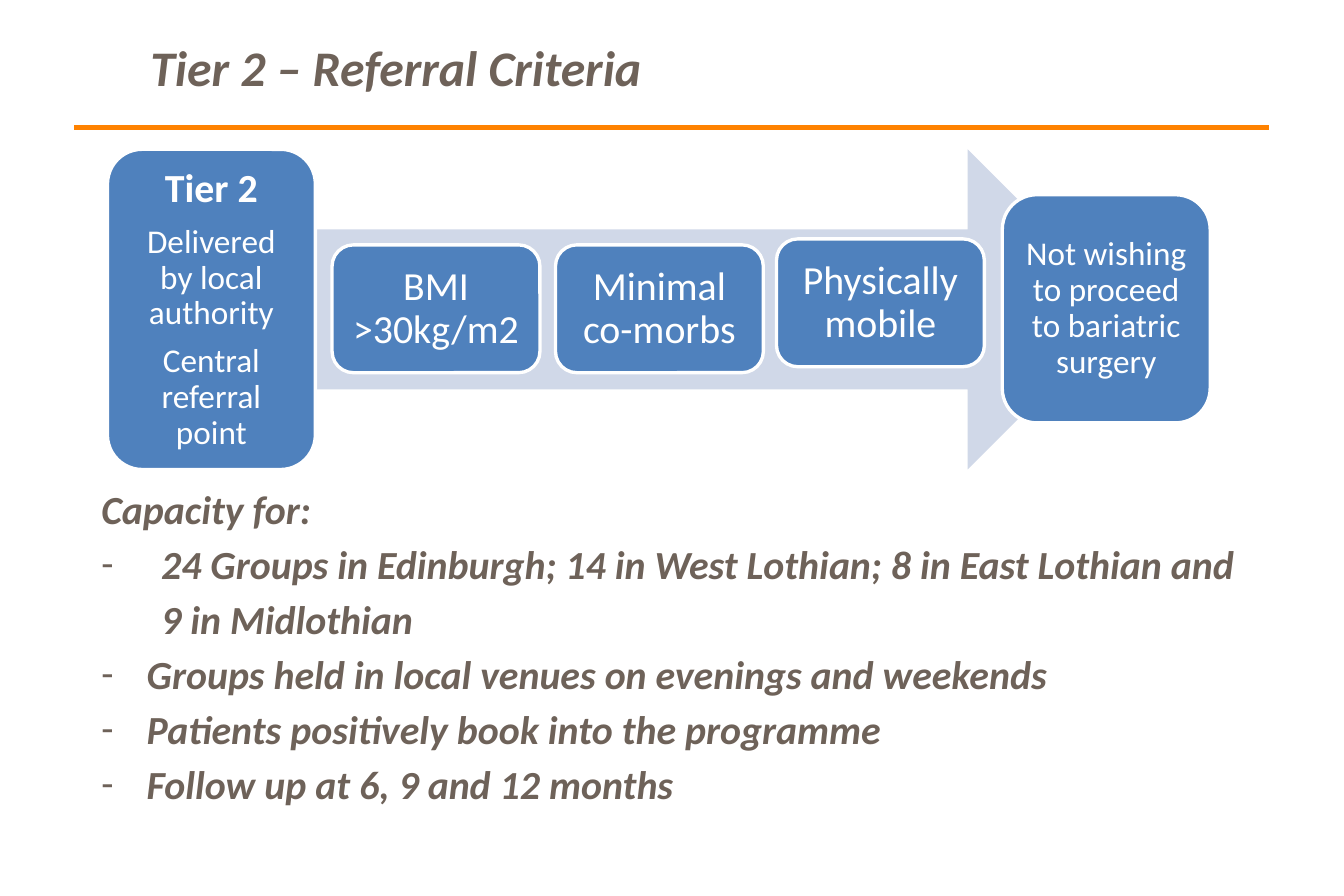
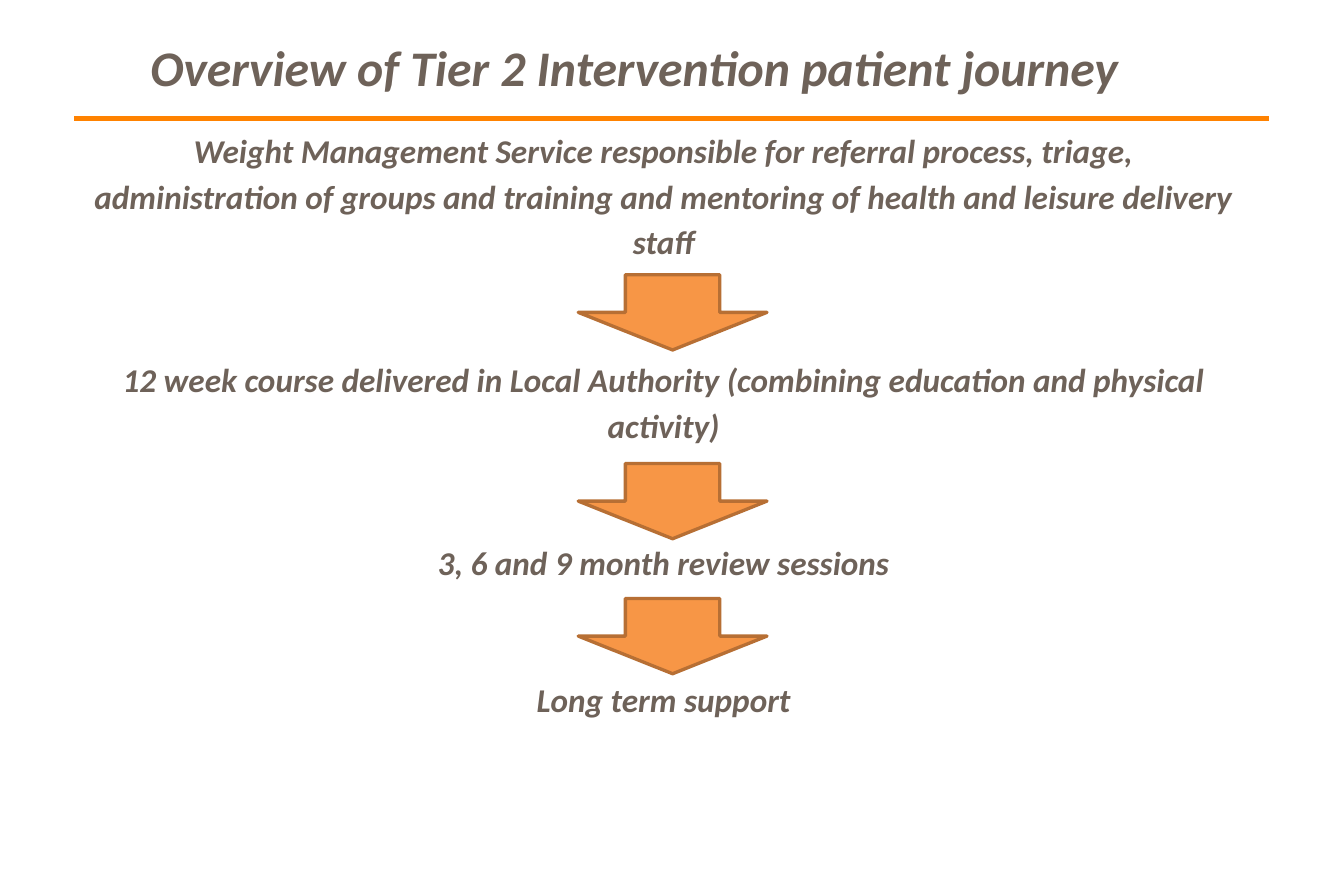
"""Build two slides on Tier 2 referral criteria and the patient journey."""
import pptx
import pptx.dml.color
import pptx.enum.shapes
import pptx.enum.text
import pptx.oxml.ns
import pptx.util
from lxml import etree

Inches = pptx.util.Inches
Pt = pptx.util.Pt
RGBColor = pptx.dml.color.RGBColor
Shapes = pptx.enum.shapes.MSO_SHAPE
Alignment = pptx.enum.text.PP_ALIGN
Anchor = pptx.enum.text.MSO_ANCHOR
qn = pptx.oxml.ns.qn

FONT = "Calibri"
BROWN = RGBColor(0x6E, 0x62, 0x59)
RULE_ORANGE = RGBColor(0xFF, 0x82, 0x00)
ARROW_ORANGE = RGBColor(0xF7, 0x96, 0x46)
ARROW_EDGE = RGBColor(0xB7, 0x6F, 0x34)
BOX_BLUE = RGBColor(0x4F, 0x81, 0xBD)
PALE_BLUE = RGBColor(0xD0, 0xD8, 0xE8)
WHITE = RGBColor(0xFF, 0xFF, 0xFF)

BOX_WIDTH = 1.74
STEP_HEIGHT = 1.07


def style_paragraph(paragraph, size, color, bold=False, italic=False):
    """Format every run of a paragraph."""
    for run in paragraph.runs:
        font = run.font
        font.name, font.size, font.color.rgb = FONT, Pt(size), color
        font.bold, font.italic = bold, italic


def fill_paragraphs(text_frame, texts):
    """Write one paragraph per text and return the paragraphs."""
    text_frame.word_wrap = True
    text_frame.text = "\n".join(texts)
    return text_frame.paragraphs


def add_text(slide, left, top, width, height, texts, size):
    """Add a text box in bold brown italics and return its paragraphs."""
    box = slide.shapes.add_textbox(
        Inches(left), Inches(top), Inches(width), Inches(height))
    paragraphs = fill_paragraphs(box.text_frame, texts)
    for paragraph in paragraphs:
        style_paragraph(paragraph, size, BROWN, bold=True, italic=True)
    return paragraphs


def add_header(slide, title, rule_top):
    """Add the title and the orange rule below it."""
    rule = slide.shapes.add_connector(
        pptx.enum.shapes.MSO_CONNECTOR.STRAIGHT,
        Inches(0.62), Inches(rule_top), Inches(10.62), Inches(rule_top))
    rule.line.color.rgb = RULE_ORANGE
    rule.line.width = Pt(3)
    etree.SubElement(rule._element.spPr, qn("a:effectLst"))
    add_text(slide, 1.16, 0.26, 9.19, 0.61, [title], 30)


def add_shape(slide, preset, left, top, width, height, fill, edge=None):
    """Add a flat preset shape with an optional outline."""
    shape = slide.shapes.add_shape(
        preset, Inches(left), Inches(top), Inches(width), Inches(height))
    shape.shadow.inherit = False
    shape.fill.solid()
    shape.fill.fore_color.rgb = fill
    if edge is None:
        shape.line.fill.background()
    else:
        shape.line.color.rgb = edge
        shape.line.width = Pt(2)
    return shape


def add_box(slide, left, top, height, lines, inset=0.1):
    """Add a blue rounded box with (text, size, bold) lines."""
    shape = add_shape(slide, Shapes.ROUNDED_RECTANGLE, left, top,
                      BOX_WIDTH, height, BOX_BLUE, WHITE)
    text_frame = shape.text_frame
    text_frame.vertical_anchor = Anchor.MIDDLE
    text_frame.margin_left = text_frame.margin_right = Inches(inset)
    text_frame.margin_top = text_frame.margin_bottom = Inches(inset)
    paragraphs = fill_paragraphs(text_frame, [line[0] for line in lines])
    for paragraph, (_, size, bold) in zip(paragraphs, lines):
        paragraph.alignment = Alignment.CENTER
        paragraph.line_spacing = 0.9
        paragraph.space_after = Pt(0.35 * size)
        style_paragraph(paragraph, size, WHITE, bold)


def add_dash(paragraph, indent):
    """Give a paragraph a hanging dash bullet."""
    properties = paragraph._p.get_or_add_pPr()
    properties.set("marL", str(Inches(indent)))
    properties.set("indent", str(-Inches(indent)))
    etree.SubElement(properties, qn("a:buFont")).set("typeface", FONT)
    etree.SubElement(properties, qn("a:buChar")).set("char", "-")


def build_criteria(slide):
    """Build the referral criteria slide."""
    add_header(slide, "Tier 2 – Referral Criteria", 1.07)
    paragraphs = add_text(slide, 0.75, 3.95, 9.75, 2.89, [
        "Capacity for:",
        "24 Groups in Edinburgh; 14 in West Lothian; 8 in East Lothian and "
        "9 in Midlothian",
        "Groups held in local venues on evenings and weekends",
        "Patients positively book into the programme",
        "Follow up at 6, 9 and 12 months",
    ], 24)
    for paragraph in paragraphs:
        paragraph.line_spacing = 1.15
    for paragraph, indent in zip(paragraphs[1:], (0.5, 0.38, 0.38, 0.38)):
        add_dash(paragraph, indent)

    add_shape(slide, Shapes.RIGHT_ARROW, 1.59, 1.25, 7.85, 2.68, PALE_BLUE)
    add_box(slide, 0.9, 1.25, 2.68, [
        ("Tier 2", 24, True),
        ("Delivered by local authority", 20, False),
        ("Central referral point", 20, False),
    ])
    for left, top, text in (
            (2.78, 2.05, "BMI >30kg/m2"),
            (4.65, 2.05, "Minimal co-morbs"),
            (6.5, 2, "Physically mobile")):
        add_box(slide, left, top, STEP_HEIGHT, [(text, 24, False)])
    add_box(slide, 8.39, 1.63, 1.91, [
        ("Not wishing to proceed to bariatric surgery", 20, False)], 0.08)


def build_journey(slide):
    """Build the patient journey slide."""
    paragraphs = add_text(slide, 0.68, 0.99, 9.75, 5.52, [
        "Weight Management Service responsible for referral process, triage, "
        "administration of groups and training and mentoring of health and "
        "leisure delivery staff",
        "12 week course delivered in Local Authority (combining education "
        "and physical activity)",
        "3, 6 and 9 month review sessions",
        "Long term support",
    ], 20)
    for paragraph in paragraphs:
        paragraph.alignment = Alignment.CENTER
        paragraph.line_spacing = 1.15
    for paragraph in paragraphs[1:]:
        paragraph.space_before = Pt(55.2)
    add_header(slide, "Overview of Tier 2 Intervention patient journey", 0.99)
    for top in (2.3, 3.88, 5.01):
        add_shape(slide, Shapes.DOWN_ARROW, 4.84, top, 1.58, 0.63,
                  ARROW_ORANGE, ARROW_EDGE)


def main():
    """Create and save the presentation."""
    presentation = pptx.Presentation()
    presentation.slide_width = Inches(11.25)
    presentation.slide_height = Inches(7.5)
    blank = presentation.slide_layouts[6]
    for build in (build_criteria, build_journey):
        build(presentation.slides.add_slide(blank))
    presentation.save("out.pptx")


if __name__ == "__main__":
    main()
